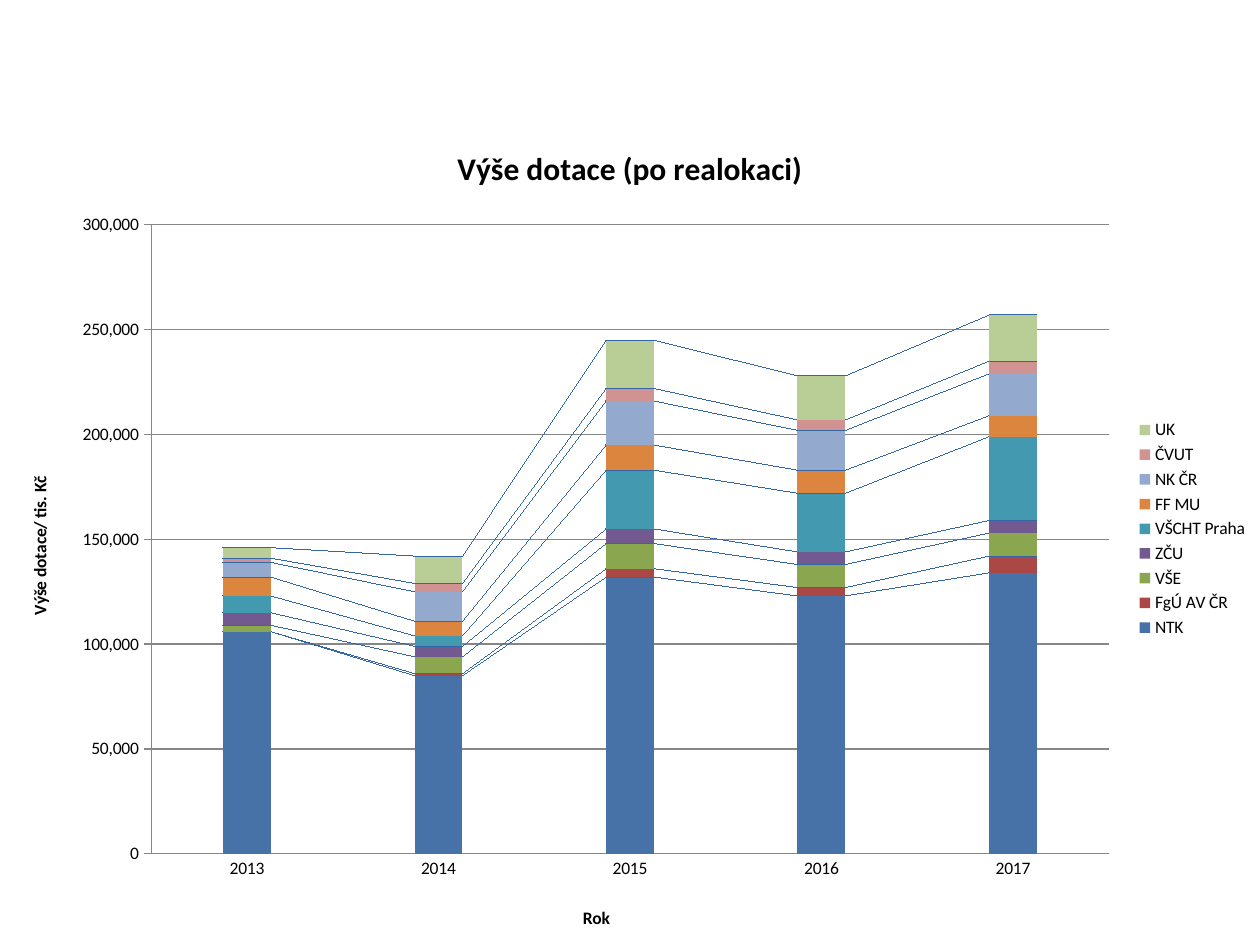
from dataclasses import dataclass

from lxml import etree
from pptx import Presentation
from pptx import util as u
from pptx.chart.data import CategoryChartData
from pptx.dml.color import RGBColor
from pptx.enum import chart as ch
from pptx.oxml import parse_xml
from pptx.oxml.ns import nsdecls, qn


@dataclass(frozen=True)
class Theme:
    font: str = "Calibri"
    text: str = "000000"
    grid: str = "868686"
    series_line: str = "2A5F9E"
    body_size: float = 10
    title_size: float = 18
    hairline: float = 0.75


@dataclass(frozen=True)
class Institution:
    name: str
    color: str
    grants: tuple[int, ...]  # thousands of the axis unit, one per year


THEME = Theme()
YEARS = ("2013", "2014", "2015", "2016", "2017")
INSTITUTIONS = (
    Institution("NTK", "4672A8", (106, 85, 132, 123, 134)),
    Institution("FgÚ AV ČR", "AB4744", (0, 1, 4, 4, 8)),
    Institution("VŠE", "8AA64F", (3, 8, 12, 11, 11)),
    Institution("ZČU", "725990", (6, 5, 7, 6, 6)),
    Institution("VŠCHT Praha", "4299B0", (8, 5, 28, 28, 40)),
    Institution("FF MU", "DC853E", (9, 7, 12, 11, 10)),
    Institution("NK ČR", "93A9CE", (7, 14, 21, 19, 20)),
    Institution("ČVUT", "D09392", (2, 4, 6, 5, 6)),
    Institution("UK", "B9CD96", (5, 13, 23, 21, 22)),
)


def style_font(font, size: float, bold: bool = False) -> None:
    font.name, font.size, font.bold = THEME.font, u.Pt(size), bold
    font.color.rgb = RGBColor.from_string(THEME.text)


def style_line(line) -> None:
    line.color.rgb = RGBColor.from_string(THEME.grid)
    line.width = u.Pt(THEME.hairline)


def write_title(title, wording: str, size: float) -> None:
    title.text_frame.text = wording
    style_font(title.text_frame.paragraphs[0].font, size, bold=True)


def place(part, index: int, inner: bool = False, **fractions: float) -> None:
    """Give a chart part a fixed position, in fractions of the chart area."""
    for old in part.findall(qn("c:layout")):
        part.remove(old)
    layout = parse_xml(f"<c:layout {nsdecls('c')}><c:manualLayout/></c:layout>")
    settings = {"layoutTarget": "inner"} if inner else {}
    settings |= {"xMode": "edge", "yMode": "edge"} | fractions
    for tag, value in settings.items():
        etree.SubElement(layout[0], qn(f"c:{tag}")).set("val", str(value))
    part.insert(index, layout)


def add_series_lines(plot_xml) -> None:
    """Join the tops of matching segments in neighbouring columns."""
    lines = parse_xml(
        f'<c:serLines {nsdecls("c", "a")}><c:spPr><a:ln w="{u.Pt(THEME.hairline)}">'
        f'<a:solidFill><a:srgbClr val="{THEME.series_line}"/></a:solidFill>'
        "</a:ln></c:spPr></c:serLines>"
    )
    plot_xml.find(qn("c:overlap")).addnext(lines)


def add_grant_chart(page):
    data = CategoryChartData(number_format="#,##0")
    data.categories = YEARS
    for item in INSTITUTIONS:
        data.add_series(item.name, [grant * 1000 for grant in item.grants])
    frame = page.shapes.add_chart(
        ch.XL_CHART_TYPE.COLUMN_STACKED, u.Pt(0), u.Pt(67), u.Pt(720), u.Pt(473), data
    )
    return frame.chart


def style_columns(chart) -> None:
    plot = chart.plots[0]
    plot.gap_width, plot.overlap, plot.vary_by_categories = 300, 100, False
    for series, item in zip(plot.series, INSTITUTIONS):
        series.format.fill.solid()
        series.format.fill.fore_color.rgb = RGBColor.from_string(item.color)
        series.format.line.fill.background()


def style_axes(chart) -> None:
    years, amounts = chart.category_axis, chart.value_axis
    for axis, wording in ((years, "Rok"), (amounts, "Výše dotace/ tis. Kč")):
        write_title(axis.axis_title, wording, THEME.body_size)
        style_font(axis.tick_labels.font, THEME.body_size)
        style_line(axis.format.line)
        axis.minor_tick_mark = ch.XL_TICK_MARK.NONE
    years.major_tick_mark = ch.XL_TICK_MARK.NONE
    years.has_major_gridlines = False
    amounts.major_tick_mark = ch.XL_TICK_MARK.OUTSIDE
    amounts.minimum_scale, amounts.maximum_scale = 0, 300000
    amounts.major_unit = 50000
    amounts.tick_labels.number_format = "#,##0"
    amounts.tick_labels.number_format_is_linked = False
    amounts.has_major_gridlines = True
    style_line(amounts.major_gridlines.format.line)


def main() -> None:
    deck = Presentation()
    deck.slide_width, deck.slide_height = u.Pt(720), u.Pt(540)
    page = deck.slides.add_slide(deck.slide_layouts[6])

    # Chart with its columns, axes and title
    chart = add_grant_chart(page)
    style_font(chart.font, THEME.body_size)
    chart.has_title = True
    write_title(chart.chart_title, "Výše dotace (po realokaci)", THEME.title_size)
    style_columns(chart)
    style_axes(chart)

    # Legend
    chart.has_legend = True
    chart.legend.position = ch.XL_LEGEND_POSITION.RIGHT
    chart.legend.include_in_layout = False
    style_font(chart.legend.font, THEME.body_size)

    # Fixed positions and series lines
    plot_area = chart.element.find(f".//{qn('c:plotArea')}")
    place(plot_area, 0, inner=True, x=0.12, y=0.13, w=0.76, h=0.76)
    place(plot_area.find(f"{qn('c:catAx')}/{qn('c:title')}"), 1, x=0.46, y=0.95)
    place(plot_area.find(f"{qn('c:valAx')}/{qn('c:title')}"), 1, x=0.02, y=0.43)
    place(chart.element.find(f".//{qn('c:legend')}"), 1, x=0.9, y=0.36)
    add_series_lines(plot_area.find(qn("c:barChart")))

    deck.save("out.pptx")


if __name__ == "__main__":
    main()
